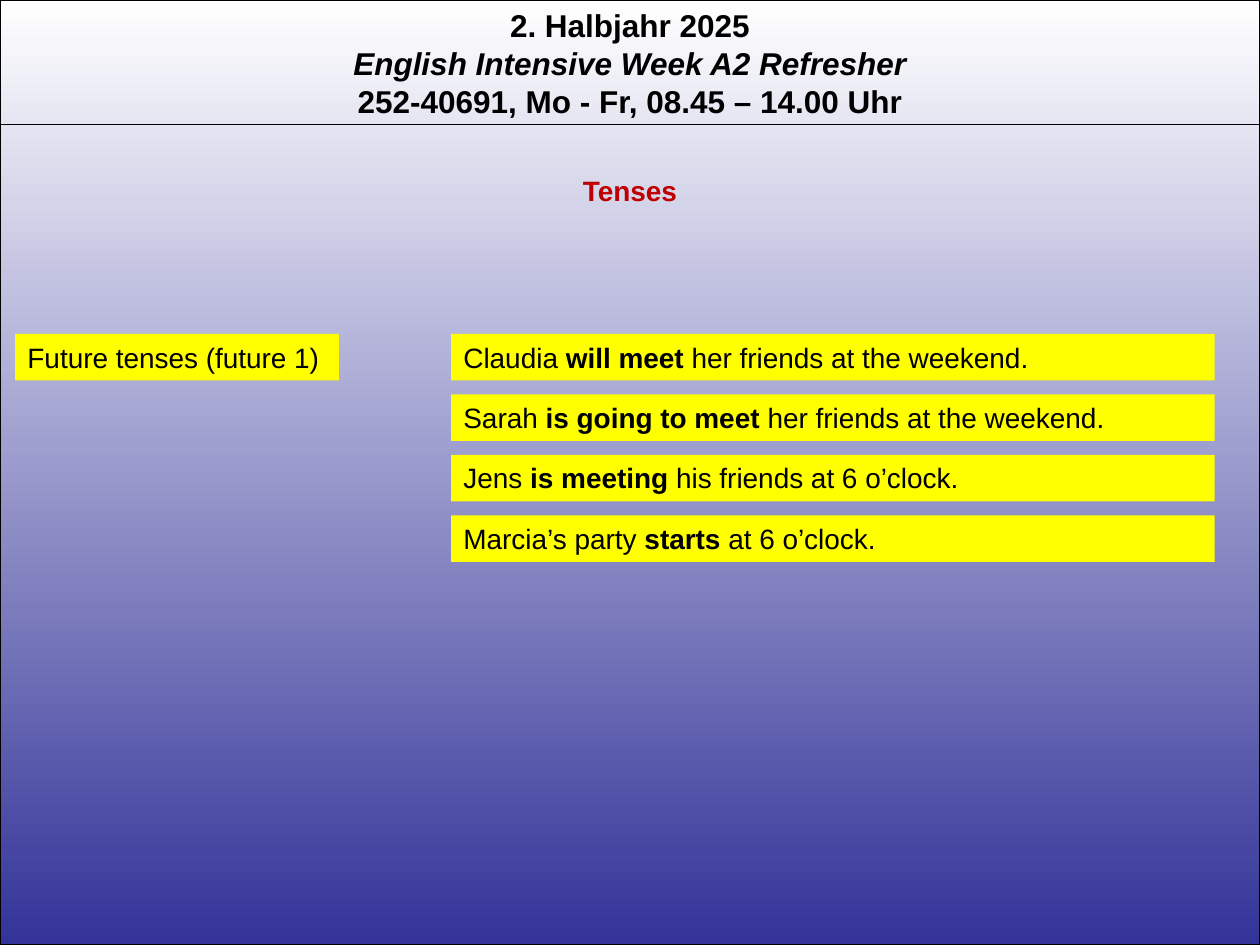
import pptx
import pptx.dml.color
import pptx.enum.shapes
import pptx.enum.text
import pptx.util
import lxml.etree
from pptx.util import Inches

# Content: each paragraph is a list of (text, style) spans; b = bold, i = italic
HEADER = [
    [("2. Halbjahr 2025", "b")],
    [("English Intensive Week A2 Refresher", "bi")],
    [("252-40691, Mo - Fr, 08.45 – 14.00 Uhr", "b")],
]
TITLE = [[("Tenses", "b")]]
TENSE = [[("Future tenses (future 1)", "")]]
EXAMPLES = [
    [("Claudia ", ""), ("will meet ", "b"), ("her friends at the weekend.", "")],
    [("Sarah ", ""), ("is going to meet ", "b"), ("her friends at the weekend.", "")],
    [("Jens ", ""), ("is meeting ", "b"), ("his friends at 6 o’clock.", "")],
    [("Marcia’s party ", ""), ("starts", "b"), (" at 6 o’clock.", "")],
]

THEME = {
    "font": "Arial", "header_size": 18, "body_size": 16, "line_width": 0.75,
    "ink": "000000", "accent": "C00000", "label": "FFFF00",
    "top": "FFFFFF", "bottom": "333399",
}
WIDTH, HEIGHT = 10, 7.5
ROW_TOP, ROW_HEIGHT, ROW_PITCH = 2.65, 0.37, 0.48


def rgb(name):
    return pptx.dml.color.RGBColor.from_string(THEME[name])


def add_text(page, paragraphs, left, top, width, height, *, size="body_size",
             color="ink", fill=None, centered=False):
    """Add a text box of styled spans, with an optional fill."""
    box = page.shapes.add_textbox(Inches(left), Inches(top), Inches(width), Inches(height))
    if fill:
        box.fill.solid()
        box.fill.fore_color.rgb = rgb(fill)
    frame = box.text_frame
    frame.word_wrap = True
    frame.auto_size = pptx.enum.text.MSO_AUTO_SIZE.SHAPE_TO_FIT_TEXT
    align = pptx.enum.text.PP_ALIGN
    for index, spans in enumerate(paragraphs):
        para = frame.add_paragraph() if index else frame.paragraphs[0]
        para.alignment = align.CENTER if centered else align.LEFT
        for text, style in spans:
            span = para.add_run()
            span.text = text
            span.font.name = THEME["font"]
            span.font.size = pptx.util.Pt(THEME[size])
            span.font.color.rgb = rgb(color)
            span.font.bold = "b" in style
            span.font.italic = "i" in style


def set_line(line):
    line.color.rgb = rgb("ink")
    line.width = pptx.util.Pt(THEME["line_width"])


def add_background(page):
    panel = page.shapes.add_shape(pptx.enum.shapes.MSO_SHAPE.RECTANGLE,
                                  0, 0, Inches(WIDTH), Inches(HEIGHT))
    panel.shadow.inherit = False
    panel.fill.gradient()
    panel.fill.gradient_angle = 270
    for stop, name, position in zip(panel.fill.gradient_stops, ("top", "bottom"), (0, 1)):
        stop.color.rgb = rgb(name)
        stop.position = position
    set_line(panel.line)


def add_rule(page, top):
    rule = page.shapes.add_connector(pptx.enum.shapes.MSO_CONNECTOR.STRAIGHT,
                                     0, Inches(top), Inches(WIDTH), Inches(top))
    set_line(rule.line)
    lxml.etree.SubElement(rule._element.spPr, pptx.oxml.ns.qn("a:effectLst"))


def main():
    deck = pptx.Presentation()
    deck.slide_width, deck.slide_height = Inches(WIDTH), Inches(HEIGHT)
    page = deck.slides.add_slide(deck.slide_layouts[6])

    # Background and course header
    add_background(page)
    add_text(page, HEADER, 0, 0, WIDTH, 1.01, size="header_size", centered=True)
    add_rule(page, 0.99)

    # Title, tense name and example sentences
    add_text(page, TITLE, 0, 1.33, WIDTH, ROW_HEIGHT, color="accent", centered=True)
    add_text(page, TENSE, 0.12, ROW_TOP, 2.57, ROW_HEIGHT, fill="label")
    for row, sentence in enumerate(EXAMPLES):
        add_text(page, [sentence], 3.58, ROW_TOP + row * ROW_PITCH, 6.06, ROW_HEIGHT,
                 fill="label")

    deck.save("out.pptx")


if __name__ == "__main__":
    main()
